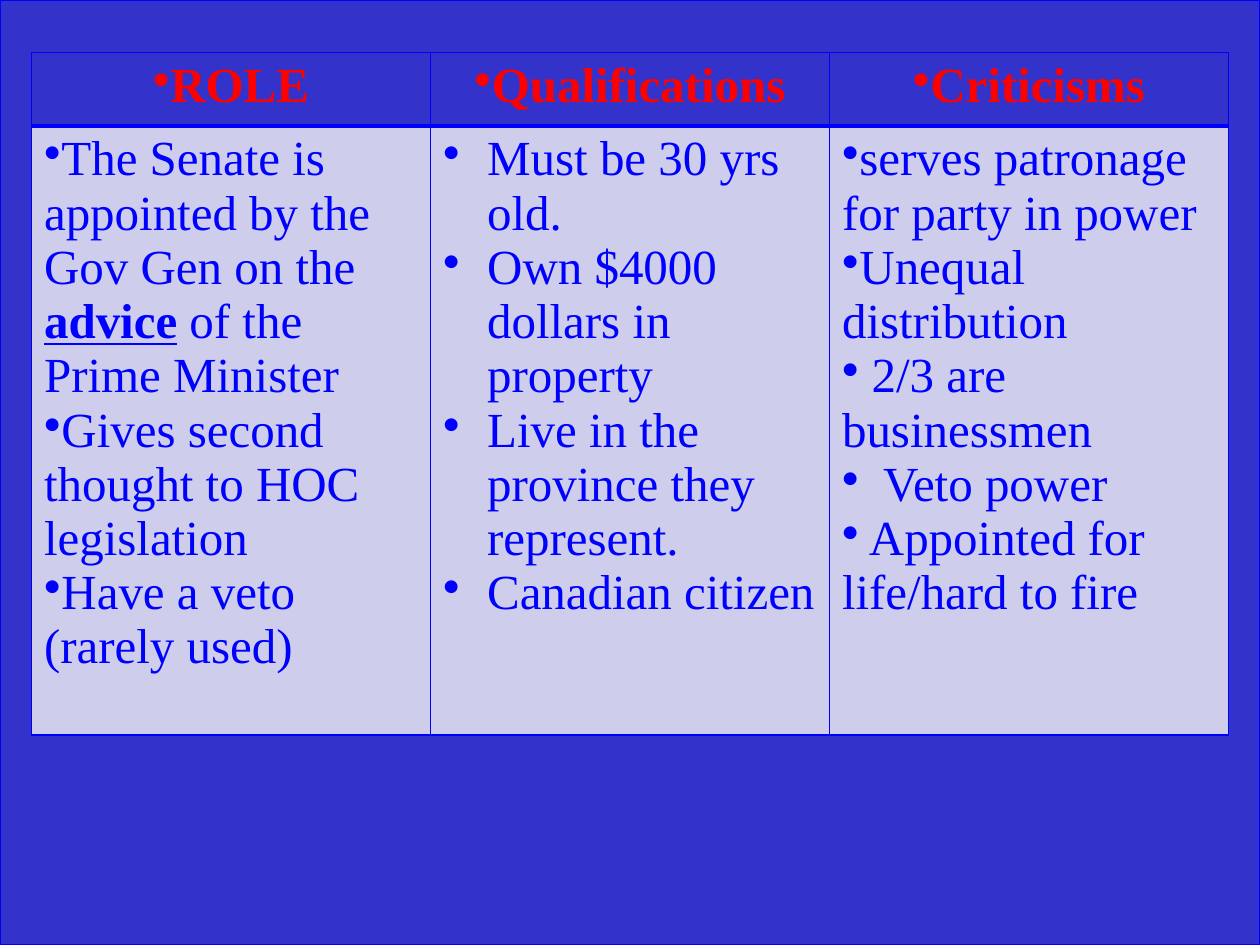
from lxml.etree import SubElement
from pptx import Presentation
from pptx.dml.color import RGBColor
from pptx.enum.shapes import MSO_SHAPE
from pptx.enum.text import PP_ALIGN
from pptx.oxml.ns import qn
from pptx.util import Pt

INDIGO = RGBColor(0x33, 0x33, 0xCC)
BLUE = RGBColor(0x00, 0x00, 0xFF)
LAVENDER = RGBColor(0xCE, 0xCE, 0xEC)
RED = RGBColor(0xFF, 0x00, 0x00)

WIDTH, HEIGHT = 720, 540
HEADER_HEIGHT, BODY_HEIGHT = 42, 348
THIN, THICK = 1, 3

# Each column: heading, then bullets as (hanging indent, runs);
# a run is (text, emphasised).
COLUMNS = [
    ("ROLE", [
        (0, [("The Senate is appointed by the Gov Gen on the ", False),
             ("advice", True),
             (" of the Prime Minister", False)]),
        (0, [("Gives second thought to HOC legislation", False)]),
        (0, [("Have a veto (rarely used)", False)]),
    ]),
    ("Qualifications", [
        (25.2, [(text, False)]) for text in (
            "Must be 30 yrs old.",
            "Own $4000 dollars in property",
            "Live in the province they represent.",
            "Canadian citizen")
    ]),
    ("Criticisms", [
        (0, [("serves patronage for party in power", False)]),
        (0, [("Unequal distribution", False)]),
        (0, [(" 2/3 are businessmen", False)]),
        (23.5, [("Veto power", False)]),
        (0, [(" Appointed for life/hard to fire", False)]),
    ]),
]


class SlideBuilder:
    font = "Times New Roman"
    size = Pt(28)

    def __init__(self, prs):
        self.slide = prs.slides.add_slide(prs.slide_layouts[6])

    def background(self, color):
        fill = self.slide.background.fill
        fill.solid()
        fill.fore_color.rgb = color

    def panel(self, left, top, width, height, fill, line):
        sp = self.slide.shapes.add_shape(
            MSO_SHAPE.ACTION_BUTTON_CUSTOM,
            Pt(left), Pt(top), Pt(width), Pt(height))
        sp.shadow.inherit = False
        sp.fill.solid()
        sp.fill.fore_color.rgb = fill
        sp.line.color.rgb = line
        sp.line.width = Pt(0.75)

    def table(self, left, top, width, row_heights, columns):
        table = self.slide.shapes.add_table(
            len(row_heights), len(columns), Pt(left), Pt(top),
            Pt(width), Pt(sum(row_heights))).table
        for row, height in zip(table.rows, row_heights):
            row.height = Pt(height)
        for i, (heading, bullets) in enumerate(columns):
            table.columns[i].width = Pt(width / len(columns))
            header, body = table.cell(0, i), table.cell(1, i)
            self.cell(header, INDIGO, THIN, THICK)
            self.bullet(header.text_frame.paragraphs[0], 0,
                        [(heading, False)], RED, PP_ALIGN.CENTER, True)
            self.cell(body, LAVENDER, THICK, THIN)
            tf = body.text_frame
            for n, (indent, runs) in enumerate(bullets):
                p = tf.add_paragraph() if n else tf.paragraphs[0]
                self.bullet(p, indent, runs, BLUE)

    def cell(self, cell, fill, top, bottom):
        """Fill a cell and draw its borders; top and bottom are line widths."""
        tcPr = cell._tc.get_or_add_tcPr()
        for side, width in zip("LRTB", (THIN, THIN, top, bottom)):
            ln = SubElement(tcPr, qn(f"a:ln{side}"), w=str(Pt(width)))
            solid = SubElement(ln, qn("a:solidFill"))
            SubElement(solid, qn("a:srgbClr"), val=str(BLUE))
        cell.fill.solid()
        cell.fill.fore_color.rgb = fill

    def bullet(self, p, indent, runs, color, align=PP_ALIGN.LEFT, bold=False):
        p.alignment = align
        pPr = p._p.get_or_add_pPr()
        pPr.set("marL", str(Pt(indent)))
        pPr.set("indent", str(-Pt(indent)))
        SubElement(pPr, qn("a:buChar"), char="•")
        for text, emphasised in runs:
            r = p.add_run()
            r.text = text
            r.font.name = self.font
            r.font.size = self.size
            r.font.bold = bold or emphasised
            r.font.underline = emphasised
            r.font.color.rgb = color


def main():
    prs = Presentation()
    prs.slide_width, prs.slide_height = Pt(WIDTH), Pt(HEIGHT)
    s = SlideBuilder(prs)
    s.background(INDIGO)
    s.panel(0, 0, WIDTH, HEIGHT, INDIGO, BLUE)
    s.table(18, 30, WIDTH - 2 * 18, (HEADER_HEIGHT, BODY_HEIGHT), COLUMNS)
    prs.save("out.pptx")


if __name__ == "__main__":
    main()
